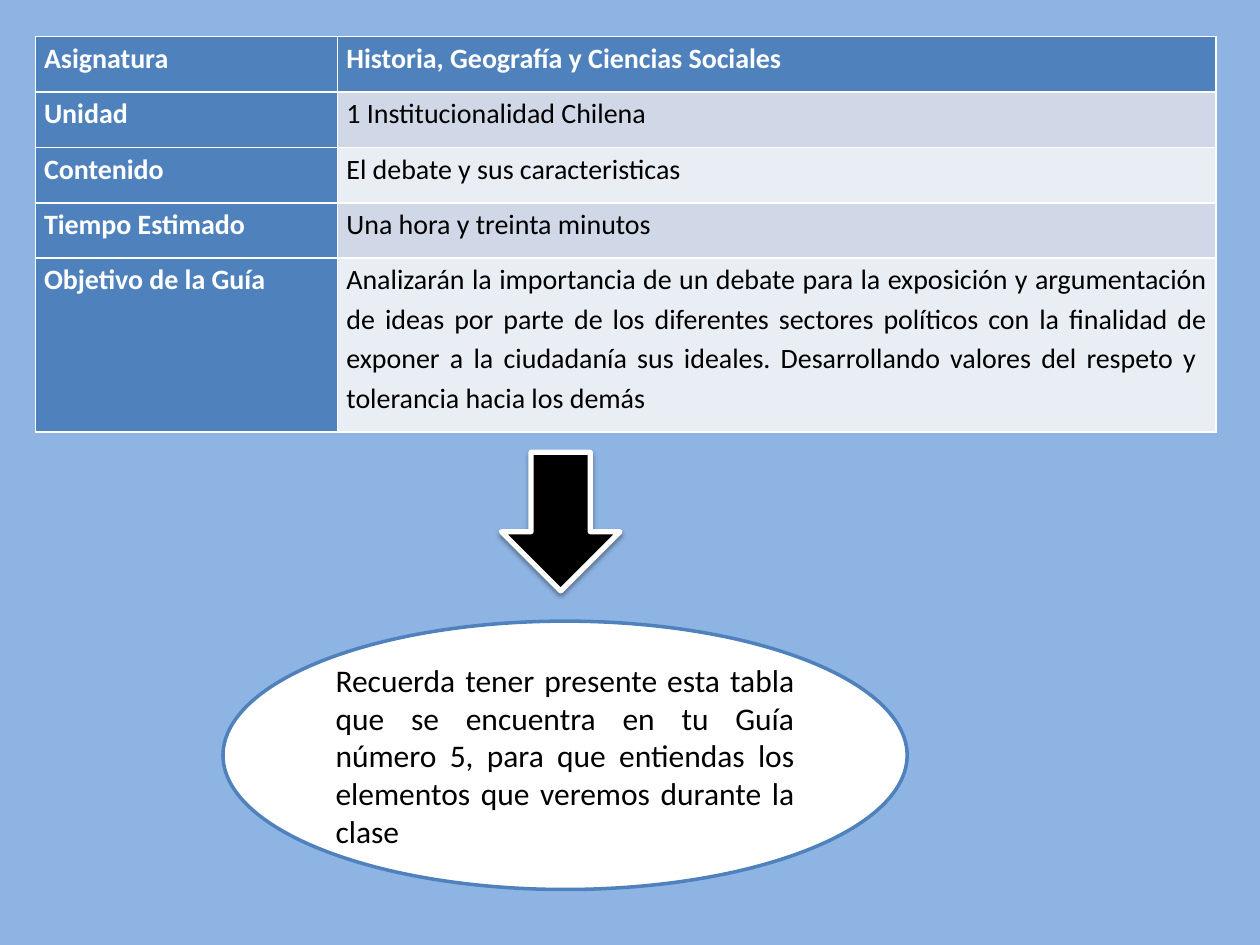
"""Builds the class guide slide: a summary table, an arrow and a reminder."""
from lxml import etree
from pptx import Presentation
from pptx.dml.color import RGBColor
from pptx.enum.shapes import MSO_SHAPE
from pptx.enum.text import MSO_ANCHOR, PP_ALIGN
from pptx.oxml.ns import qn
from pptx.util import Inches, Pt

DOWN_ARROW, ELLIPSE = MSO_SHAPE.DOWN_ARROW, MSO_SHAPE.OVAL
TOP, MIDDLE = MSO_ANCHOR.TOP, MSO_ANCHOR.MIDDLE
JUSTIFY = PP_ALIGN.JUSTIFY

SKY = RGBColor(0x8E, 0xB4, 0xE3)
BLUE = RGBColor(0x4F, 0x81, 0xBD)
BAND_DARK = RGBColor(0xD0, 0xD8, 0xE8)
BAND_LIGHT = RGBColor(0xE9, 0xED, 0xF4)
WHITE = RGBColor(0xFF, 0xFF, 0xFF)
BLACK = RGBColor(0x00, 0x00, 0x00)

FONT = "Calibri"
COLUMN_WIDTHS = (2.4, 6.97)
ROW_HEIGHTS = (0.44, 0.44, 0.44, 0.44, 1.38)
GUIDE_ROWS = (
    ("Asignatura", "Historia, Geografía y Ciencias Sociales"),
    ("Unidad", "1 Institucionalidad Chilena"),
    ("Contenido", "El debate y sus caracteristicas "),
    ("Tiempo Estimado", "Una hora y treinta minutos"),
    ("Objetivo de la Guía",
     "Analizarán la importancia de un debate para la exposición y "
     "argumentación de ideas por parte de los diferentes sectores políticos "
     "con la finalidad de exponer a la ciudadanía sus ideales. Desarrollando "
     "valores del respeto y  tolerancia hacia los demás "),
)
REMINDER = (
    "Recuerda tener presente esta tabla que se encuentra en tu Guía número 5, "
    "para que entiendas los elementos que veremos durante la clase"
)


def write_text(frame, text, size, color, bold=False, spacing=None):
    """Put one justified paragraph in a text frame."""
    frame.text = text
    para = frame.paragraphs[0]
    para.alignment = JUSTIFY
    para.line_spacing = spacing
    font = para.runs[0].font
    font.name, font.size, font.bold = FONT, Pt(size), bold
    font.color.rgb = color


def fill_cell(cell, text, fill, color, bold):
    """Set the text, margins and fill of a table cell."""
    cell.margin_left = cell.margin_right = Inches(0.07)
    cell.margin_top = cell.margin_bottom = 0
    cell.vertical_anchor = TOP
    cell.fill.solid()
    cell.fill.fore_color.rgb = fill
    write_text(cell.text_frame, text, 16, color, bold, 1.15)


def add_guide_table(page):
    """Add the table with a blue header row and a blue label column."""
    table = page.shapes.add_table(
        len(GUIDE_ROWS), len(COLUMN_WIDTHS), Inches(0.28), Inches(0.29),
        Inches(sum(COLUMN_WIDTHS)), Inches(sum(ROW_HEIGHTS))).table
    table.first_col = True
    for column, width in zip(table.columns, COLUMN_WIDTHS):
        column.width = Inches(width)
    for row, height in zip(table.rows, ROW_HEIGHTS):
        row.height = Inches(height)
    for r, texts in enumerate(GUIDE_ROWS):
        band = BAND_DARK if r % 2 else BAND_LIGHT
        for c, text in enumerate(texts):
            heading = r == 0 or c == 0
            fill_cell(table.cell(r, c), text, BLUE if heading else band,
                      WHITE if heading else BLACK, heading)


def add_outlined_shape(page, preset, left, top, width, height, fill, line, weight):
    """Add a filled and outlined preset shape without shadow."""
    shape = page.shapes.add_shape(
        preset, Inches(left), Inches(top), Inches(width), Inches(height))
    shape.shadow.inherit = False
    shape.fill.solid()
    shape.fill.fore_color.rgb = fill
    shape.line.color.rgb = line
    shape.line.width = Pt(weight)
    return shape


def add_soft_shadow(shape):
    """Give a shape a soft black shadow below it."""
    effects = shape._element.spPr.find(qn("a:effectLst"))
    shadow = etree.SubElement(
        effects, qn("a:outerShdw"), blurRad=str(Pt(3.1)), dist=str(Pt(1.6)),
        dir="5400000", rotWithShape="0")
    color = etree.SubElement(shadow, qn("a:srgbClr"), val=str(BLACK))
    etree.SubElement(color, qn("a:alpha"), val="38000")


def main():
    """Build and save the slide."""
    deck = Presentation()
    deck.slide_width, deck.slide_height = Inches(10), Inches(7.5)
    page = deck.slides.add_slide(deck.slide_layouts[6])
    page.background.fill.solid()
    page.background.fill.fore_color.rgb = SKY

    add_guide_table(page)
    arrow = add_outlined_shape(
        page, DOWN_ARROW, 3.98, 3.59, 0.94, 1.1, BLACK, WHITE, 3)
    add_soft_shadow(arrow)
    bubble = add_outlined_shape(
        page, ELLIPSE, 1.77, 4.93, 5.43, 2.13, WHITE, BLUE, 2)
    bubble.text_frame.word_wrap = True
    bubble.text_frame.vertical_anchor = MIDDLE
    write_text(bubble.text_frame, REMINDER, 18, BLACK)

    deck.save("out.pptx")


if __name__ == "__main__":
    main()
